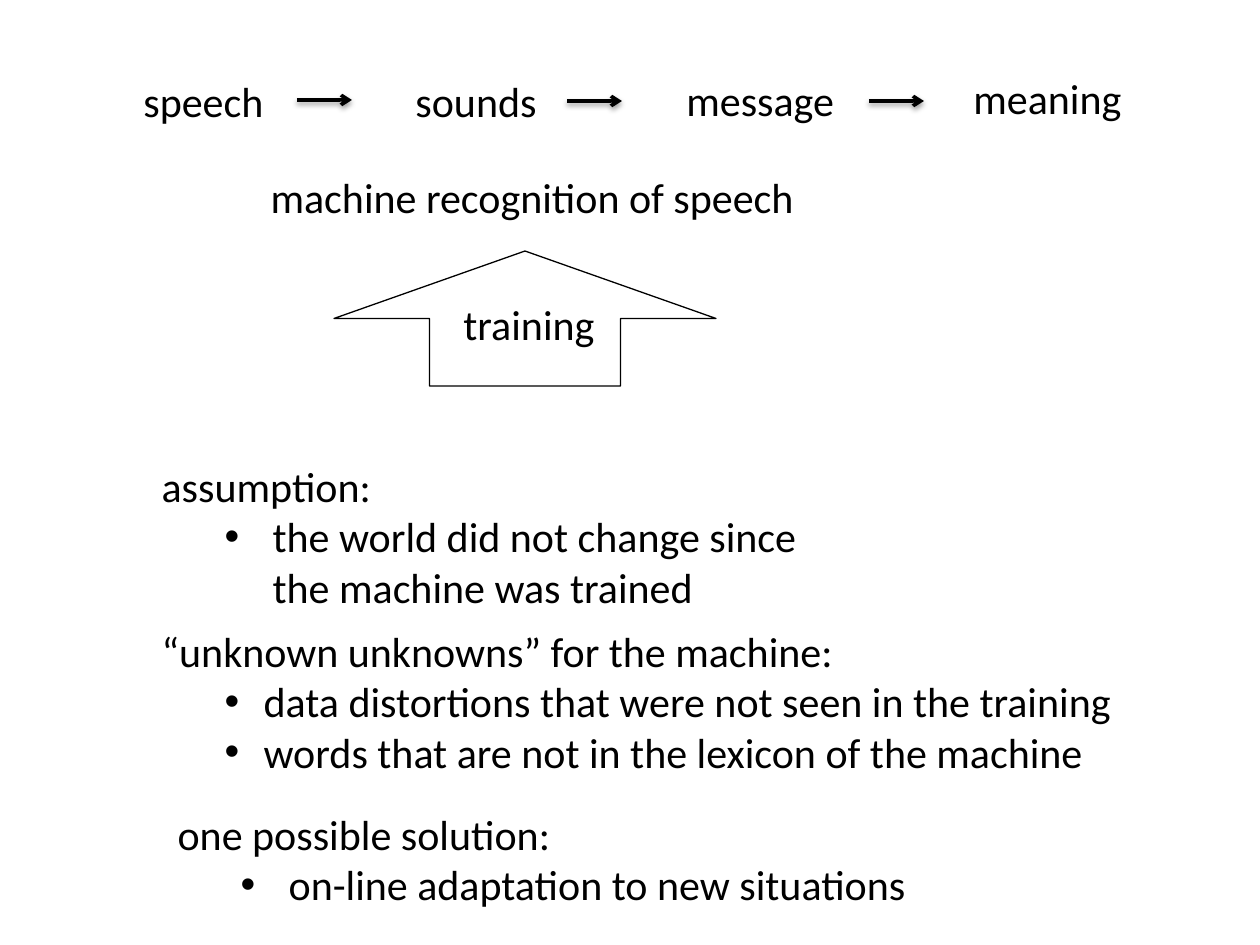
from lxml import etree
from pptx import Presentation
from pptx import util as u
from pptx.dml.color import RGBColor
from pptx.enum import shapes, text
from pptx.oxml import ns

BLACK = RGBColor(0, 0, 0)
WHITE = RGBColor(255, 255, 255)
PX = u.Inches(1) / 126


def emu(*lengths):
    return [u.Emu(round(length * PX)) for length in lengths]


def add_xml(parent, tag, **attributes):
    return etree.SubElement(parent, ns.qn(tag), attributes)


class SpeechSlide:
    font = {"name": "Calibri", "size": u.Pt(24), "bold": False}
    frame = {
        "auto_size": text.MSO_AUTO_SIZE.NONE,
        "vertical_anchor": text.MSO_ANCHOR.TOP,
        "margin_left": u.Inches(0.1),
        "margin_right": u.Inches(0.1),
        "margin_top": u.Inches(0.05),
        "margin_bottom": u.Inches(0.05),
    }
    paragraph = {
        "alignment": text.PP_ALIGN.LEFT,
        "line_spacing": 1.0,
        "space_before": u.Pt(0),
        "space_after": u.Pt(0),
    }

    def __init__(self, slide):
        self.slide = slide
        fill = slide.background.fill
        fill.solid()
        fill.fore_color.rgb = WHITE

    def apply(self, target, values):
        for name, value in values.items():
            setattr(target, name, value)

    def place(self, holder, box):
        self.apply(holder, dict(zip(("left", "top", "width", "height"), emu(*box))))

    def set_lines(self, frame, lines, wrap=False):
        self.apply(frame, {**self.frame, "word_wrap": wrap})
        for number, words in enumerate(lines):
            line = frame.add_paragraph() if number else frame.paragraphs[0]
            self.apply(line, self.paragraph)
            run = line.add_run()
            run.text = words
            self.apply(run.font, self.font)
            run.font.color.rgb = BLACK

    def label(self, words, *box):
        self.set_lines(self.slide.shapes.add_textbox(*emu(*box)).text_frame, [words])

    def title(self, words, *box):
        heading = self.slide.shapes.title
        self.place(heading, box)
        self.set_lines(heading.text_frame, [words])

    def topic(self, index, lines, box, indent, hanging, wrap=False):
        body = self.slide.placeholders[index]
        self.place(body, box)
        self.set_lines(body.text_frame, lines, wrap)
        for number, line in enumerate(body.text_frame.paragraphs):
            line.level = min(number, 1)
            properties = line._p.get_or_add_pPr()
            margin, first = emu(indent, -hanging) if number else (0, 0)
            properties.set("marL", str(margin))
            properties.set("indent", str(first))
            if number:
                add_xml(properties, "a:buFont", typeface="Arial")
                add_xml(properties, "a:buChar", char="•")
            else:
                add_xml(properties, "a:buNone")

    def step(self, left, y, width):
        arrow = self.slide.shapes.add_connector(
            shapes.MSO_CONNECTOR.STRAIGHT, *emu(left, y, left + width, y))
        arrow.line.color.rgb = BLACK
        arrow.line.width = u.Pt(2)
        properties = arrow.element.spPr
        add_xml(properties.find(ns.qn("a:ln")), "a:tailEnd", type="arrow")
        shadow = add_xml(
            add_xml(properties, "a:effectLst"), "a:outerShdw",
            blurRad=str(u.Pt(3.1)), dist=str(u.Pt(1.6)), dir="5400000", rotWithShape="0")
        add_xml(add_xml(shadow, "a:srgbClr", val=str(BLACK)), "a:alpha", val="38000")

    def up_arrow(self, *box):
        arrow = self.slide.shapes.add_shape(shapes.MSO_SHAPE.UP_ARROW, *emu(*box))
        arrow.shadow.inherit = False
        arrow.fill.background()
        arrow.line.color.rgb = BLACK
        arrow.line.width = u.Pt(0.75)

    def drop_empty(self):
        for holder in list(self.slide.placeholders):
            if not holder.text_frame.text:
                holder.element.getparent().remove(holder.element)


def main():
    deck = Presentation()
    deck.slide_width, deck.slide_height = u.Inches(10), u.Inches(7.5)
    page = SpeechSlide(deck.slides.add_slide(deck.slide_layouts.get_by_name("Comparison")))

    for stage, left, top, width in (
        ("speech", 131, 69, 146),
        ("sounds", 403, 69, 147),
        ("message", 674, 68, 175),
        ("meaning", 961, 66, 175),
    ):
        page.label(stage, left, top, width, 63)
    for left, y in ((297, 100), (567, 101), (869, 101)):
        page.step(left, y, 55)

    page.title("machine recognition of speech", 258, 165, 554, 63)
    page.label("training", 451, 292, 159, 63)
    page.up_arrow(334, 251, 382, 135)

    page.topic(1, [
        "assumption:",
        "the world did not change since the machine was trained",
    ], (149, 454, 721, 165), 111, 48, wrap=True)
    page.topic(2, [
        "“unknown unknowns” for the machine:",
        "data distortions that were not seen in the training",
        "words that are not in the lexicon of the machine",
    ], (149, 619, 989, 165), 102, 39)
    page.topic(3, [
        "one possible solution:",
        "on-line adaptation to new situations",
    ], (165, 802, 759, 115), 111, 48)
    page.drop_empty()
    deck.save("out.pptx")


if __name__ == "__main__":
    main()
